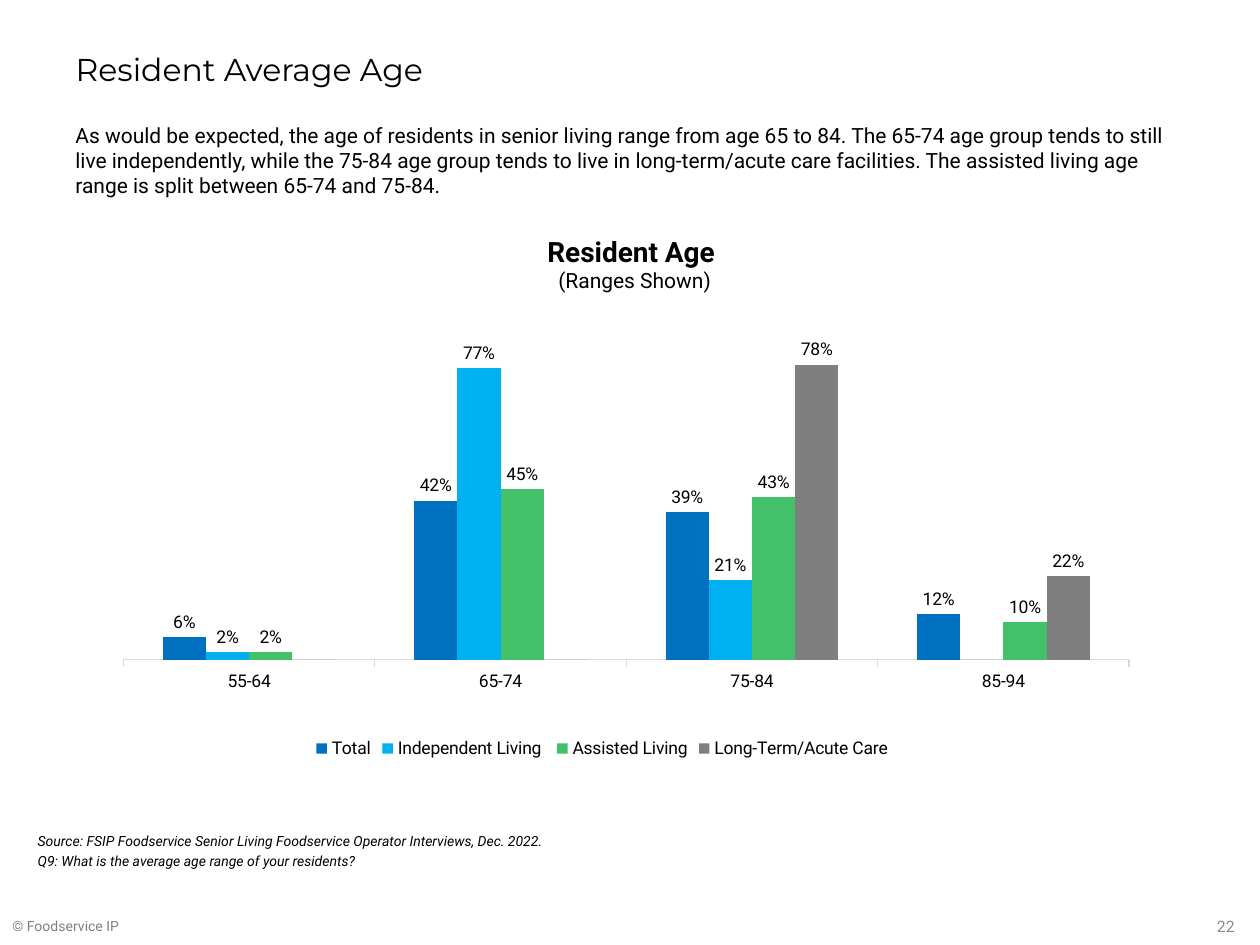
"""Build the resident average age slide with its clustered column chart."""
from dataclasses import dataclass

from pptx import Presentation, util as u
from pptx.chart.data import CategoryChartData
from pptx.dml.color import RGBColor
from pptx.enum import chart as ch, text
from pptx.oxml import parse_xml
from pptx.oxml.ns import nsdecls, qn


@dataclass(frozen=True)
class Theme:
    head: str = "Montserrat"
    body: str = "Roboto"
    ink: str = "000000"
    footer: str = "808080"
    number: str = "8C8C8C"
    axis: str = "D9D9D9"
    title_pt: int = 18
    heading_pt: int = 16
    body_pt: int = 12
    chart_pt: int = 10
    number_pt: int = 9
    small_pt: int = 8


T = Theme()
TITLE = "Resident Average Age"
INTRO = (
    "As would be expected, the age of residents in senior living range from age 65 to 84. "
    "The 65-74 age group tends to still live independently, while the 75-84 age group tends "
    "to live in long-term/acute care facilities. The assisted living age range is split "
    "between 65-74 and 75-84."
)
HEADING, SUBHEADING = "Resident Age ", "(Ranges Shown)"
SOURCES = [
    "Source: FSIP Foodservice Senior Living Foodservice Operator Interviews, Dec. 2022.",
    "Q9: What is the average age range of your residents?",
]
AGES = ["55-64", "65-74", "75-84", "85-94"]
SERIES = [
    ("Total", "0070C0", (0.06, 0.42, 0.39, 0.12)),
    ("Independent Living ", "00B0F0", (0.02, 0.77, 0.21, 0)),
    ("Assisted Living", "43C16A", (0.02, 0.45, 0.43, 0.1)),
    ("Long-Term/Acute Care ", "7F7F7F", (0, 0, 0.78, 0.22)),
]
PLOT = {"x": 0.065, "y": 0.018, "w": 0.91, "h": 0.753}
BOXES = {
    "title": (1.27, 0.76, 22.86, 1.24),
    "intro": (1.27, 2.34, 22.86, 2),
    "heading": (1.35, 4.6, 22.89, 1.45),
    "chart": (1.04, 6.27, 22.28, 9.12),
    "sources": (0.51, 16.56, 19.41, 1.09),
    "footer": (0, 17.96, 5.84, 0.99),
    "number": (18.21, 18.16, 6.93, 1.02),
}


def box(name):
    return [u.Cm(v) for v in BOXES[name]]


def style(font, size, color=T.ink, name=T.body, **flags):
    font.name, font.size = name, u.Pt(size)
    font.color.rgb = RGBColor.from_string(color)
    for flag, value in flags.items():
        setattr(font, flag, value)


def add_text(s, name, lines, size, color=T.ink, anchor=text.MSO_ANCHOR.TOP,
             align=text.PP_ALIGN.LEFT, **flags):
    tf = s.shapes.add_textbox(*box(name)).text_frame
    tf.word_wrap, tf.vertical_anchor = True, anchor
    for i, line in enumerate(lines):
        p = tf.add_paragraph() if i else tf.paragraphs[0]
        p.text, p.alignment = line, align
        if i:
            p.space_before = u.Pt(0.2 * size)
        style(p.font, size, color, **flags)
    return tf


def add_title(s):
    sp = s.shapes.title
    sp.left, sp.top, sp.width, sp.height = box("title")
    tf = sp.text_frame
    tf.text, tf.vertical_anchor = TITLE, text.MSO_ANCHOR.MIDDLE
    tf.auto_size = text.MSO_AUTO_SIZE.NONE
    p = tf.paragraphs[0]
    p.alignment = text.PP_ALIGN.LEFT
    style(p.font, T.title_pt, name=T.head)


def add_heading(s):
    tf = add_text(s, "heading", [HEADING], T.heading_pt, align=text.PP_ALIGN.CENTER)
    p = tf.paragraphs[0]
    p.runs[0].font.bold = True
    p.add_line_break()
    r = p.add_run()
    r.text, r.font.size = SUBHEADING, u.Pt(T.body_pt)


def place_plot(chart):
    values = "".join(f'<c:{k} val="{v}"/>' for k, v in PLOT.items())
    area = chart._chartSpace.chart.plotArea
    for old in area.findall(qn("c:layout")):
        area.remove(old)
    area.insert(0, parse_xml(
        f'<c:layout {nsdecls("c")}><c:manualLayout><c:layoutTarget val="inner"/>'
        f'<c:xMode val="edge"/><c:yMode val="edge"/>{values}</c:manualLayout></c:layout>'))


def add_age_chart(s):
    data = CategoryChartData(number_format="0%")
    data.categories = AGES
    for name, _, values in SERIES:
        data.add_series(name, values)
    chart = s.shapes.add_chart(ch.XL_CHART_TYPE.COLUMN_CLUSTERED, *box("chart"), data).chart
    style(chart.font, T.chart_pt)
    chart.has_title = False
    chart.has_legend = True
    chart.legend.position = ch.XL_LEGEND_POSITION.BOTTOM
    chart.legend.include_in_layout = False
    style(chart.legend.font, T.chart_pt)

    cat, val = chart.category_axis, chart.value_axis
    cat.major_tick_mark = ch.XL_TICK_MARK.OUTSIDE
    cat.format.line.color.rgb = RGBColor.from_string(T.axis)
    cat.format.line.width = u.Pt(0.75)
    style(cat.tick_labels.font, T.chart_pt)
    val.minimum_scale, val.maximum_scale = 0, 0.9
    val.has_major_gridlines = val.visible = False

    plot = chart.plots[0]
    plot.gap_width, plot.overlap, plot.vary_by_categories = 182, 0, False
    for series, (_, color, _) in zip(plot.series, SERIES):
        series.format.fill.solid()
        series.format.fill.fore_color.rgb = RGBColor.from_string(color)
        series.invert_if_negative = False
        labels = series.data_labels
        labels.show_value = True
        labels.position = ch.XL_LABEL_POSITION.OUTSIDE_END
        labels.number_format, labels.number_format_is_linked = "0%;;", False
        style(labels.font, T.chart_pt)
    place_plot(chart)


def main():
    prs = Presentation()
    prs.slide_width, prs.slide_height = u.Cm(25.4), u.Cm(19.05)
    s = prs.slides.add_slide(prs.slide_layouts[5])
    add_title(s)
    add_text(s, "intro", [INTRO], T.body_pt)
    add_age_chart(s)
    add_heading(s)
    bottom, middle = text.MSO_ANCHOR.BOTTOM, text.MSO_ANCHOR.MIDDLE
    add_text(s, "sources", SOURCES, T.small_pt, anchor=bottom, italic=True)
    add_text(s, "footer", ["© Foodservice IP"], T.small_pt, T.footer, bottom)
    add_text(s, "number", ["22"], T.number_pt, T.number, middle, text.PP_ALIGN.RIGHT)
    prs.save("out.pptx")


if __name__ == "__main__":
    main()
